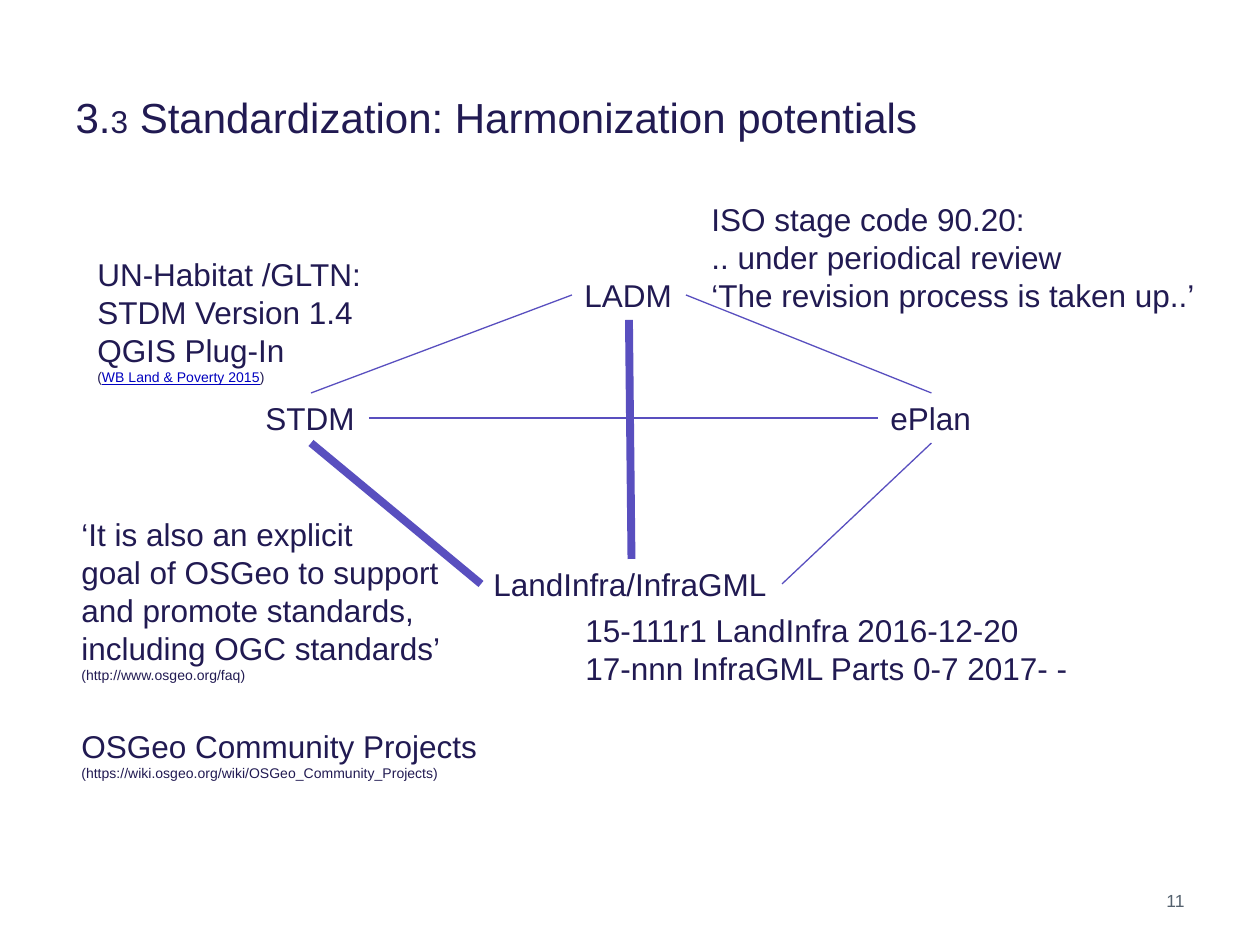
"""Builds the slide on harmonization potentials between land standards."""
from lxml import etree
from pptx import Presentation
from pptx import util as u
from pptx.dml.color import RGBColor
from pptx.enum import shapes, text

INK, LINE, LINK, GREY = "211A52", "594FBF", "0000BF", "54616E"
TOP, LEFT, BASE, RIGHT = range(4)


def px(*nums):
    return [u.Emu(round(n * 914400 / 126)) for n in nums]


def write(box, lines, size=18, color=INK, wrap=False, fit=True,
          anchor=text.MSO_ANCHOR.TOP, align=text.PP_ALIGN.LEFT):
    frame = box.text_frame
    frame.word_wrap = wrap
    frame.auto_size = (text.MSO_AUTO_SIZE.SHAPE_TO_FIT_TEXT if fit
                       else text.MSO_AUTO_SIZE.NONE)
    frame.vertical_anchor = anchor
    for i, line in enumerate(lines):
        para = frame.add_paragraph() if i else frame.paragraphs[0]
        para.alignment = align
        for part in [line] if isinstance(line, str) else line:
            words, pt, tint = part if isinstance(part, tuple) else (part, size, color)
            run = para.add_run()
            run.text = words
            run.font.name = "Arial"
            run.font.size = u.Pt(pt)
            run.font.color.rgb = RGBColor.from_string(tint)
            run.font.underline = True if tint == LINK else None
    return box


deck = Presentation()
deck.slide_width, deck.slide_height = px(1260, 945)
slide = deck.slides.add_slide(deck.slide_layouts[5])
items = slide.shapes

title = items.title
title.left, title.top, title.width, title.height = px(63, 38, 1134, 157)
write(title, [["3.", ("3", 18, INK), " Standardization: Harmonization potentials"]],
      size=24, wrap=True, fit=False, anchor=text.MSO_ANCHOR.MIDDLE)

nodes = {}
for name, x, y, w in [
    ("LADM", 572, 270, 114),
    ("STDM", 253, 393, 116),
    ("ePlan", 878, 393, 107),
    ("LandInfra/InfraGML", 481, 559, 301),
]:
    nodes[name] = write(items.add_textbox(*px(x, y, w, 50)), [name])

for start, out, end, into, pt in [
    ("STDM", TOP, "LADM", LEFT, 0.75),
    ("LADM", RIGHT, "ePlan", TOP, 0.75),
    ("ePlan", BASE, "LandInfra/InfraGML", RIGHT, 0.75),
    ("STDM", BASE, "LandInfra/InfraGML", LEFT, 4.5),
    ("STDM", RIGHT, "ePlan", LEFT, 0.75),
    ("LADM", BASE, "LandInfra/InfraGML", TOP, 4.5),
]:
    link = items.add_connector(shapes.MSO_CONNECTOR.STRAIGHT, 0, 0, 0, 0)
    link.begin_connect(nodes[start], out)
    link.end_connect(nodes[end], into)
    link.line.color.rgb = RGBColor.from_string(LINE)
    link.line.width = u.Pt(pt)
    props = link._element.spPr
    etree.SubElement(props, props.tag.replace("}spPr", "}effectLst").replace(
        "presentationml", "drawingml").replace("/2006/main", "/2006/main"))

for spot, lines, wrap in [
    ((699, 194, 520, 127),
     ["ISO stage code 90.20:", ".. under periodical review",
      "‘The revision process is taken up..’"], False),
    ((573, 605, 512, 89),
     ["15-111r1 LandInfra 2016-12-20", "17-nnn InfraGML Parts 0-7 2017- -"], False),
    ((69, 509, 392, 183),
     ["‘It is also an explicit",
      "goal of OSGeo to support and promote standards, including OGC standards’",
      [("(http://www.osgeo.org/faq)", 8, INK)]], True),
    ((69, 721, 425, 68),
     ["OSGeo Community Projects",
      [("(https://wiki.osgeo.org/wiki/OSGeo_Community_Projects)", 8, INK)]], False),
    ((85, 249, 291, 144),
     ["UN-Habitat /GLTN:", "STDM Version 1.4", "QGIS Plug-In",
      [("(", 8, INK), ("WB Land & Poverty 2015", 8, LINK), (")", 8, INK)]], False),
]:
    write(items.add_textbox(*px(*spot)), lines, wrap=wrap)

write(items.add_textbox(*px(903, 876, 294, 50)), ["11"], size=10, color=GREY,
      wrap=True, fit=False, anchor=text.MSO_ANCHOR.MIDDLE, align=text.PP_ALIGN.RIGHT)

deck.save("out.pptx")
